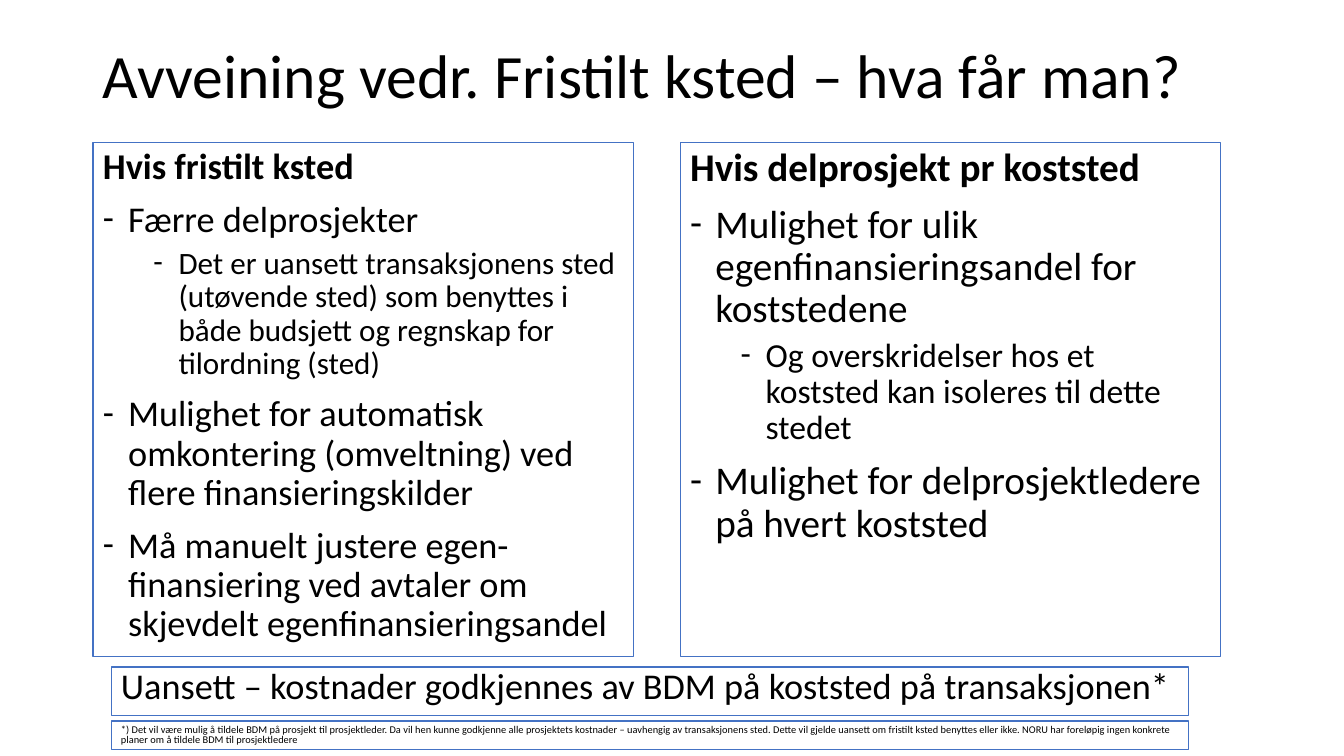
import pptx
import pptx.util
import pptx.dml.color
import pptx.enum.shapes
import pptx.enum.text
import lxml.etree
import pptx.oxml.ns

BLACK = pptx.dml.color.RGBColor(0x00, 0x00, 0x00)
BLUE = pptx.dml.color.RGBColor(0x44, 0x72, 0xC4)
PX_PER_INCH = 100.8


def px(n):
    return pptx.util.Inches(n / PX_PER_INCH)


class Deck:
    font = "Calibri"
    line_width = pptx.util.Pt(0.75)

    def __init__(self, prs):
        self.s = prs.slides.add_slide(prs.slide_layouts[6])

    def frame(self, sp, anchor):
        tf = sp.text_frame
        tf.word_wrap = True
        tf.vertical_anchor = anchor
        return tf

    def title(self, text, x, y, w, h, size):
        sp = self.s.shapes.add_textbox(px(x), px(y), px(w), px(h))
        tf = self.frame(sp, pptx.enum.text.MSO_ANCHOR.MIDDLE)
        self.paragraph(tf.paragraphs[0], text, size)

    def box(self, x, y, w, h):
        sp = self.s.shapes.add_shape(
            pptx.enum.shapes.MSO_SHAPE.RECTANGLE, px(x), px(y), px(w), px(h))
        sp.shadow.inherit = False
        sp.fill.background()
        sp.line.color.rgb = BLUE
        sp.line.width = self.line_width
        return self.frame(sp, pptx.enum.text.MSO_ANCHOR.TOP)

    def paragraph(self, p, text, size, bold=False, spacing=0.9, before=0):
        p.alignment = pptx.enum.text.PP_ALIGN.LEFT
        p.line_spacing = spacing
        p.space_before = pptx.util.Pt(before)
        r = p.add_run()
        r.text = text
        r.font.name = self.font
        r.font.size = pptx.util.Pt(size)
        r.font.bold = bold
        r.font.color.rgb = BLACK

    def bullet(self, p, level):
        p.level = level
        pPr = p._p.get_or_add_pPr()
        pPr.set("marL", str(pptx.util.Inches(0.25 + 0.5 * level)))
        pPr.set("indent", str(pptx.util.Inches(-0.25)))
        qn = pptx.oxml.ns.qn
        lxml.etree.SubElement(pPr, qn("a:buFont")).set("typeface", self.font)
        lxml.etree.SubElement(pPr, qn("a:buChar")).set("char", "-")

    def column(self, x, y, w, h, heading, items, sizes):
        tf = self.box(x, y, w, h)
        self.paragraph(tf.paragraphs[0], heading, sizes[0], bold=True, before=10)
        for level, text in items:
            p = tf.add_paragraph()
            self.paragraph(p, text, sizes[level], before=(10, 5)[level])
            self.bullet(p, level)

    def note(self, text, x, y, w, h, size):
        tf = self.box(x, y, w, h)
        self.paragraph(tf.paragraphs[0], text, size, spacing=0.8, before=10)


def main():
    prs = pptx.Presentation()
    prs.slide_width = pptx.util.Inches(13.33)
    prs.slide_height = pptx.util.Inches(7.5)
    deck = Deck(prs)

    deck.title("Avveining vedr. Fristilt ksted – hva får man?", 93, 35, 1159, 88, 44)

    columns = [
        ("Hvis fristilt ksted", (25.9, 22.2), [
            (0, "Færre delprosjekter"),
            (1, "Det er uansett transaksjonens sted (utøvende sted) som benyttes i "
                "både budsjett og regnskap for tilordning (sted)"),
            (0, "Mulighet for automatisk omkontering (omveltning) ved flere "
                "finansieringskilder"),
            (0, "Må manuelt justere egen-finansiering ved avtaler om skjevdelt "
                "egenfinansieringsandel"),
        ]),
        ("Hvis delprosjekt pr koststed", (28, 24), [
            (0, "Mulighet for ulik egenfinansieringsandel for koststedene"),
            (1, "Og overskridelser hos et koststed kan isoleres til dette stedet"),
            (0, "Mulighet for delprosjektledere på hvert koststed"),
        ]),
    ]
    for i, (heading, sizes, items) in enumerate(columns):
        deck.column(93 + 587 * i, 143, 540, 514, heading, items, sizes)

    deck.note("Uansett – kostnader godkjennes av BDM på koststed på transaksjonen*",
              111, 667, 1077, 49, 25.9)
    deck.note("*) Det vil være mulig å tildele BDM på prosjekt til prosjektleder. "
              "Da vil hen kunne godkjenne alle prosjektets kostnader – uavhengig av "
              "transaksjonens sted. Dette vil gjelde uansett om fristilt ksted "
              "benyttes eller ikke. NORU har foreløpig ingen konkrete planer om å "
              "tildele BDM til prosjektledere",
              111, 721, 1077, 29, 7.4)

    prs.save("out.pptx")


if __name__ == "__main__":
    main()
